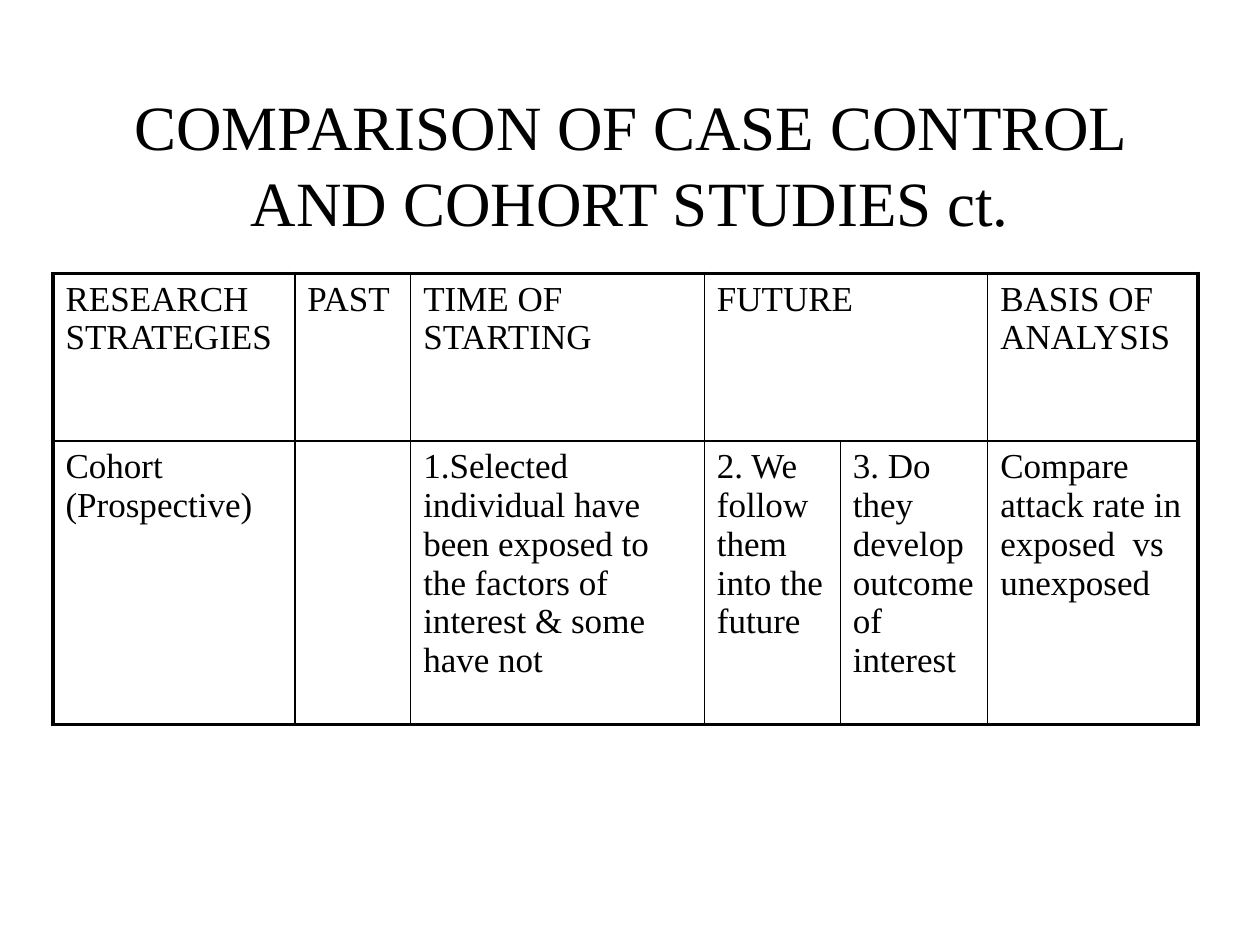
import pptx
import pptx.util
import pptx.dml.color
import pptx.enum.text
import pptx.oxml
import pptx.oxml.ns
from pptx.util import Inches

COLORS = {"ink": "000000"}
COLUMNS = [1.92, 0.92, 2.33, 1.08, 1.17, 1.67]
ROWS = [1.33, 2.25]
CELLS = [
    ["RESEARCH STRATEGIES", "PAST", "TIME OF STARTING", "FUTURE", "", "BASIS OF ANALYSIS"],
    [
        "Cohort (Prospective)",
        "",
        "1.Selected individual have been exposed to the factors of interest & some have not",
        "2. We follow them into the future",
        "3. Do they develop outcome of interest",
        "Compare attack rate in exposed  vs unexposed",
    ],
]


class SlideBuilder:
    """Holds the text style and the current slide, and adds elements to it."""

    def __init__(self, slide, font="Times New Roman", inner=1, outer=2.25):
        self.slide = slide
        self.font = font
        self.inner = inner
        self.outer = outer

    def style(self, p, size):
        p.font.name = self.font
        p.font.size = pptx.util.Pt(size)
        p.font.bold = False
        p.font.color.rgb = pptx.dml.color.RGBColor.from_string(COLORS["ink"])

    def title(self, text, left, top, width, height):
        sp = self.slide.shapes.title
        sp.left, sp.top = Inches(left), Inches(top)
        sp.width, sp.height = Inches(width), Inches(height)
        tf = sp.text_frame
        tf.text = text
        tf.word_wrap = True
        tf.auto_size = pptx.enum.text.MSO_AUTO_SIZE.NONE
        tf.vertical_anchor = pptx.enum.text.MSO_ANCHOR.MIDDLE
        p = tf.paragraphs[0]
        p.alignment = pptx.enum.text.PP_ALIGN.CENTER
        self.style(p, 36)

    def border(self, cell, edges):
        tc_pr = cell._tc.get_or_add_tcPr()
        for i, (side, outer) in enumerate(edges.items()):
            width = pptx.util.Pt(self.outer if outer else self.inner)
            tc_pr.insert(i, pptx.oxml.parse_xml(
                f'<a:ln{side} {pptx.oxml.ns.nsdecls("a")} w="{width}"><a:solidFill>'
                f'<a:srgbClr val="{COLORS["ink"]}"/></a:solidFill></a:ln{side}>'))

    def table(self, cells, columns, rows, left, top):
        shape = self.slide.shapes.add_table(
            len(rows), len(columns), Inches(left), Inches(top),
            Inches(sum(columns)), Inches(sum(rows)))
        table = shape.table
        table.first_row = table.horz_banding = False
        for column, width in zip(table.columns, columns):
            column.width = Inches(width)
        for row, height in zip(table.rows, rows):
            row.height = Inches(height)
        for r, texts in enumerate(cells):
            for c, text in enumerate(texts):
                cell = table.cell(r, c)
                cell.text = text
                cell.fill.background()
                p = cell.text_frame.paragraphs[0]
                p.space_before = pptx.util.Pt(4)
                self.style(p, 20)
                self.border(cell, {"L": c == 0, "R": c == len(columns) - 1,
                                   "T": r == 0, "B": r == len(rows) - 1})
        return table


def main():
    prs = pptx.Presentation()
    prs.slide_width, prs.slide_height = Inches(10), Inches(7.5)
    builder = SlideBuilder(prs.slides.add_slide(prs.slide_layouts[5]))
    builder.title("COMPARISON OF CASE CONTROL AND COHORT STUDIES ct.", 0.75, 0.67, 8.5, 1.25)
    table = builder.table(CELLS, COLUMNS, ROWS, 0.42, 2.17)
    table.cell(0, 3).merge(table.cell(0, 4))
    prs.save("out.pptx")


if __name__ == "__main__":
    main()
